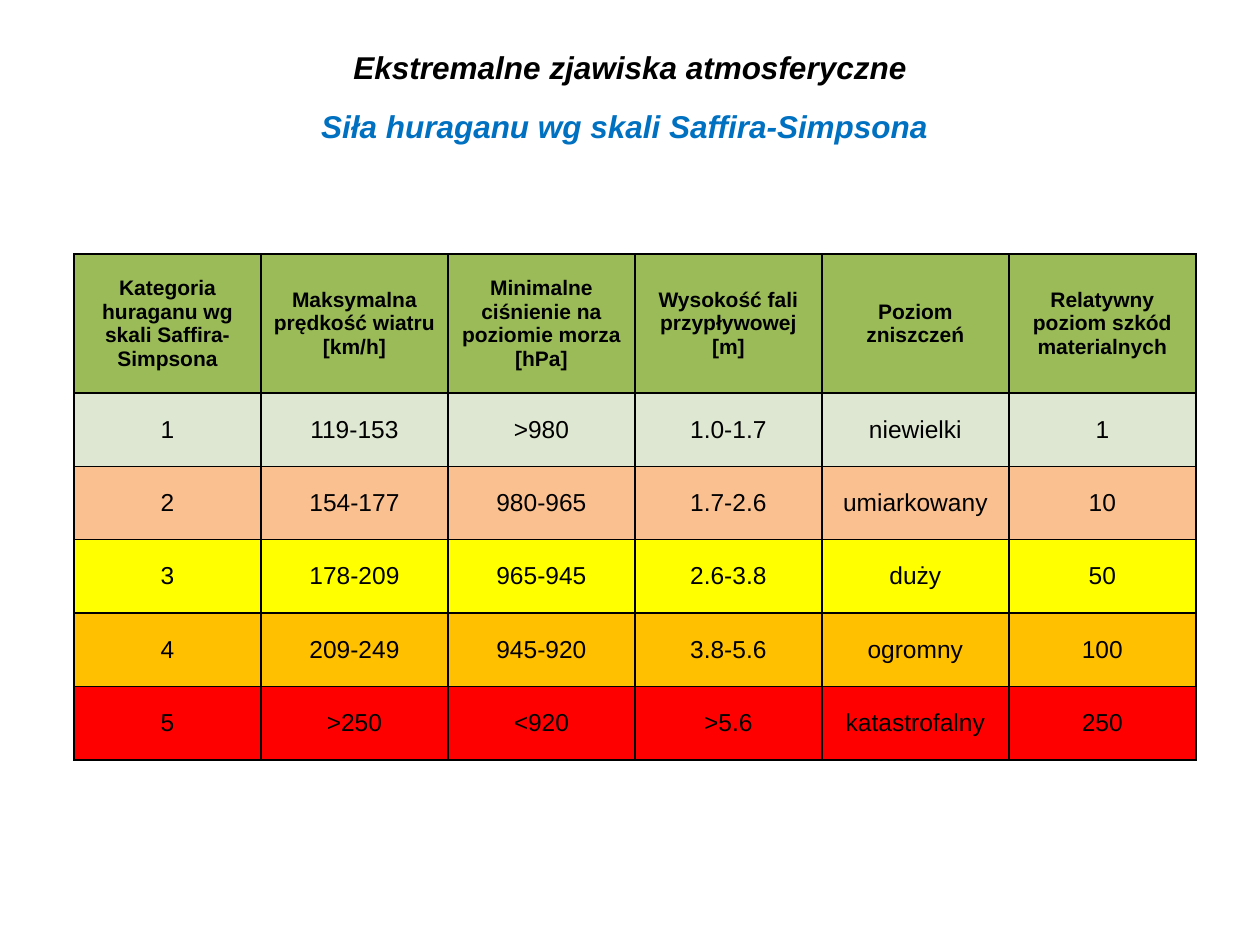
from lxml import etree
from pptx import Presentation
from pptx.dml.color import RGBColor
from pptx.enum.text import MSO_ANCHOR, PP_ALIGN
from pptx.oxml.ns import qn
from pptx.util import Pt

CENTER = PP_ALIGN.CENTER
MIDDLE = MSO_ANCHOR.MIDDLE

PX = 914400 / 126
SLIDE_SIZE = (1260, 945)
TITLE_BOX = (63, 38, 1134, 58)
SUBTITLE_BOX = (62, 97, 1134, 58)
TABLE_BOX = (74, 254, 1122, 506)
HEADER_HEIGHT = 139
BORDER_WIDTH = Pt(1)

BLACK = RGBColor(0x00, 0x00, 0x00)
BLUE = RGBColor(0x00, 0x70, 0xC0)
GREEN = RGBColor(0x9B, 0xBB, 0x59)
PALE_GREEN = RGBColor(0xDE, 0xE7, 0xD1)
PEACH = RGBColor(0xFA, 0xC0, 0x90)
YELLOW = RGBColor(0xFF, 0xFF, 0x00)
AMBER = RGBColor(0xFF, 0xC0, 0x00)
RED = RGBColor(0xFF, 0x00, 0x00)

HEADING_FORMAT = {"name": "Arial", "size": Pt(18), "bold": True, "italic": True}
HEADER_FORMAT = {"name": "Arial", "size": Pt(12), "bold": True, "italic": False}
BODY_FORMAT = {"name": "Arial", "size": Pt(14), "bold": False, "italic": False}

COLUMN_HEADINGS = [
    "Kategoria huraganu wg skali Saffira- Simpsona",
    "Maksymalna prędkość wiatru\n[km/h]",
    "Minimalne ciśnienie na poziomie morza\n[hPa]",
    "Wysokość fali przypływowej\n[m]",
    "Poziom zniszczeń",
    "Relatywny poziom szkód materialnych",
]
CATEGORIES = [
    (PALE_GREEN, ["1", "119-153", ">980", "1.0-1.7", "niewielki", "1"]),
    (PEACH, ["2", "154-177", "980-965", "1.7-2.6", "umiarkowany", "10"]),
    (YELLOW, ["3", "178-209", "965-945", "2.6-3.8", "duży", "50"]),
    (AMBER, ["4", "209-249", "945-920", "3.8-5.6", "ogromny", "100"]),
    (RED, ["5", ">250", "<920", ">5.6", "katastrofalny", "250"]),
]


def emu(px):
    return round(px * PX)


def write_text(frame, text, text_format, color):
    frame.text = text
    frame.word_wrap = True
    for paragraph in frame.paragraphs:
        paragraph.alignment = CENTER
        for run in paragraph.runs:
            for attribute, value in text_format.items():
                setattr(run.font, attribute, value)
            run.font.color.rgb = color


def place_heading(heading, box, text, color):
    heading.left, heading.top, heading.width, heading.height = map(emu, box)
    write_text(heading.text_frame, text, HEADING_FORMAT, color)
    heading.text_frame.vertical_anchor = MIDDLE


def add_title(slide, box):
    place_heading(slide.shapes.title, box, "Ekstremalne zjawiska atmosferyczne", BLACK)


def add_subtitle(slide, box):
    subtitle = slide.shapes.add_textbox(*map(emu, box))
    place_heading(subtitle, box, "Siła huraganu wg skali Saffira-Simpsona ", BLUE)


def add_borders(cell):
    properties = cell._tc.get_or_add_tcPr()
    for position, side in enumerate(("a:lnL", "a:lnR", "a:lnT", "a:lnB")):
        line = etree.Element(qn(side), w=str(BORDER_WIDTH))
        fill = etree.SubElement(line, qn("a:solidFill"))
        etree.SubElement(fill, qn("a:srgbClr"), val=str(BLACK))
        properties.insert(position, line)


def fill_row(row, texts, color, text_format):
    for cell, text in zip(row.cells, texts):
        write_text(cell.text_frame, text, text_format, BLACK)
        cell.vertical_anchor = MIDDLE
        cell.fill.solid()
        cell.fill.fore_color.rgb = color
        add_borders(cell)


def add_hurricane_table(slide, box):
    width, height = box[2:]
    scale = slide.shapes.add_table(
        len(CATEGORIES) + 1, len(COLUMN_HEADINGS), *map(emu, box)
    ).table
    scale.first_row = False
    scale.horz_banding = False
    for column in scale.columns:
        column.width = emu(width / len(COLUMN_HEADINGS))

    header, *category_rows = scale.rows
    header.height = emu(HEADER_HEIGHT)
    fill_row(header, COLUMN_HEADINGS, GREEN, HEADER_FORMAT)
    for row, (color, values) in zip(category_rows, CATEGORIES):
        row.height = emu((height - HEADER_HEIGHT) / len(CATEGORIES))
        fill_row(row, values, color, BODY_FORMAT)


def main():
    presentation = Presentation()
    presentation.slide_width, presentation.slide_height = map(emu, SLIDE_SIZE)
    slide = presentation.slides.add_slide(presentation.slide_layouts[5])
    add_title(slide, TITLE_BOX)
    add_subtitle(slide, SUBTITLE_BOX)
    add_hurricane_table(slide, TABLE_BOX)
    presentation.save("out.pptx")


if __name__ == "__main__":
    main()
